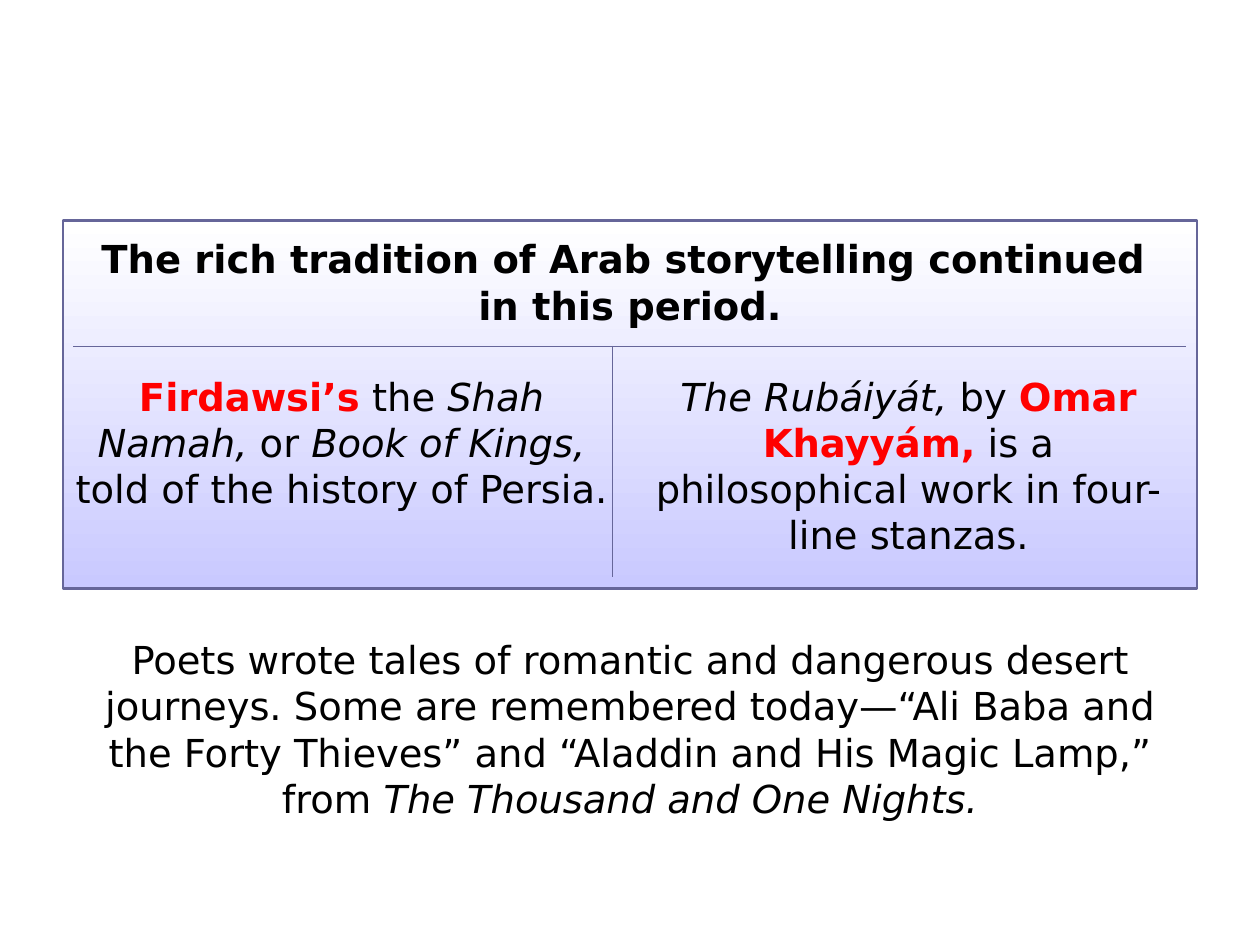
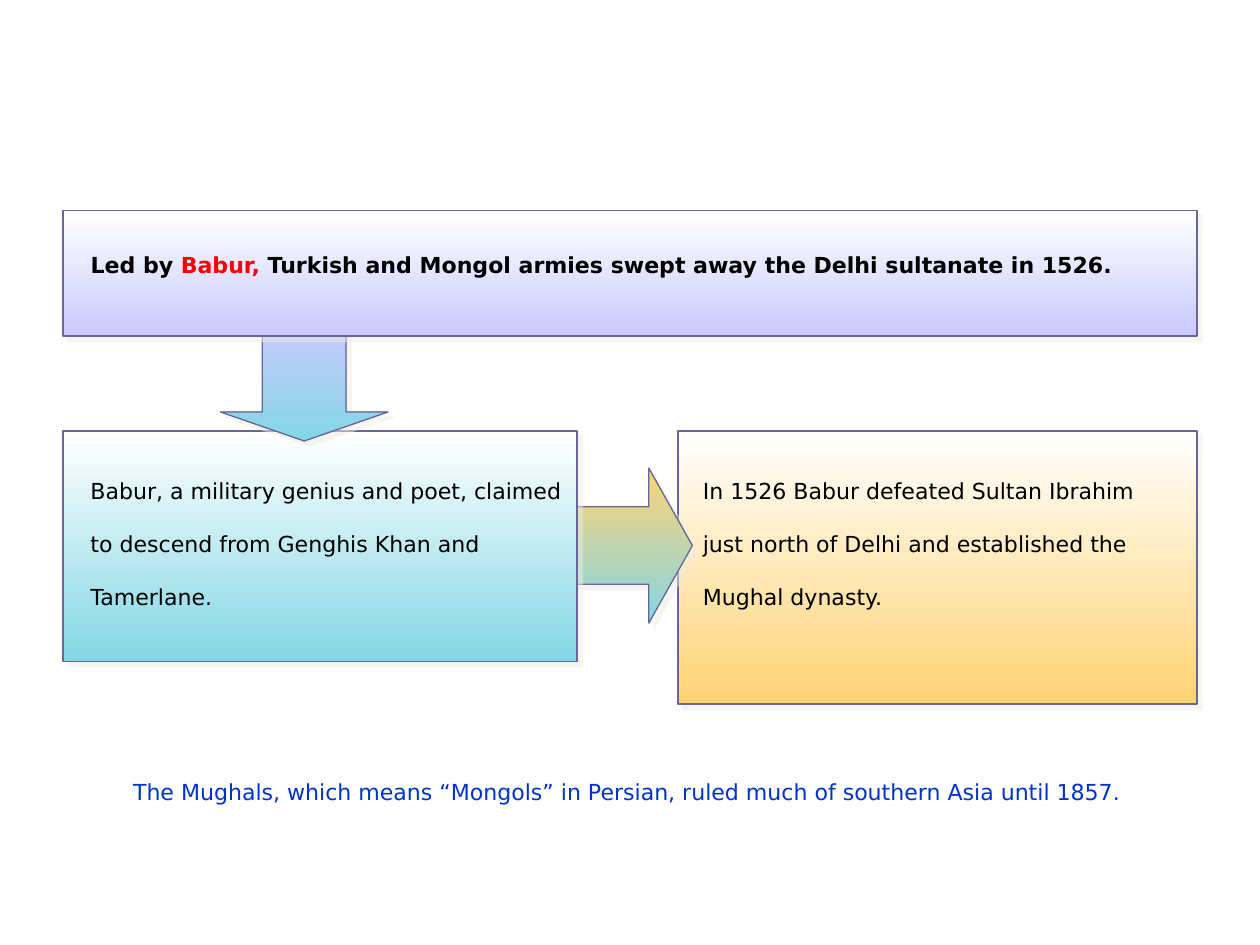
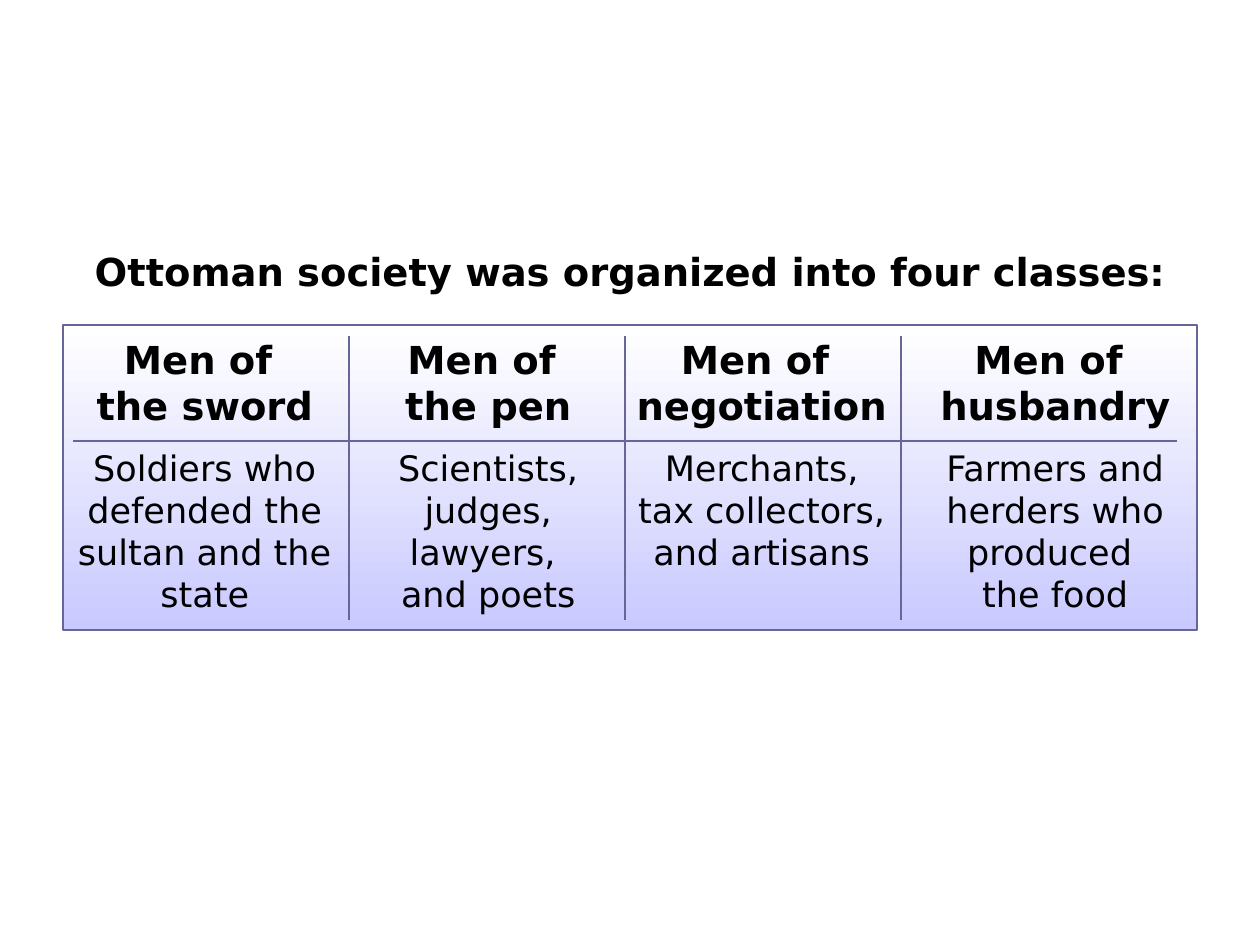
import pptx
import pptx.util
import pptx.dml.color
import pptx.enum.shapes
import pptx.enum.text
import pptx.oxml
import pptx.oxml.ns

Inches = pptx.util.Inches
Pt = pptx.util.Pt
RGB = pptx.dml.color.RGBColor
ALIGN = pptx.enum.text.PP_ALIGN
SHAPE = pptx.enum.shapes.MSO_SHAPE
NS = pptx.oxml.ns.nsdecls("a")

BLACK = RGB(0x00, 0x00, 0x00)
WHITE = RGB(0xFF, 0xFF, 0xFF)
RED = RGB(0xFF, 0x00, 0x00)
BLUE = RGB(0x00, 0x33, 0xCC)
SLATE = RGB(0x66, 0x66, 0x99)
LAVENDER = RGB(0xC9, 0xC9, 0xFF)
TEAL = RGB(0x83, 0xD7, 0xE5)
GOLD = RGB(0xFE, 0xD2, 0x73)
SHADOW = RGB(0xEE, 0xEC, 0xE1)

FONT = "DejaVu Sans"
LEFT, WIDTH = 0.5, 9
HEAD_SIZE, BODY_SIZE, FLOW_SIZE = 22, 20, 12.6
KEY = dict(bold=True, color=RED)
ITALIC = dict(italic=True)


def add_run(p, text, size=HEAD_SIZE, color=BLACK, bold=False, italic=False):
    r = p.add_run()
    r.text = text
    r.font.name = FONT
    r.font.size = Pt(size)
    r.font.color.rgb = color
    r.font.bold = bold
    r.font.italic = italic


def border_xml(side, visible):
    if not visible:
        return f'<a:ln{side} {NS} w="0"><a:noFill/></a:ln{side}>'
    return (f'<a:ln{side} {NS} w="{Pt(1)}"><a:solidFill><a:srgbClr val="{SLATE}"/>'
            f'</a:solidFill></a:ln{side}>')


class Deck:
    def __init__(self):
        self.prs = pptx.Presentation()
        self.prs.slide_width = Inches(10)
        self.prs.slide_height = Inches(7.5)
        self.slide = None

    def new_slide(self):
        self.slide = self.prs.slides.add_slide(self.prs.slide_layouts[6])

    def text(self, x, y, w, h, *paragraphs, align=ALIGN.CENTER, spacing=None, gap=0, **style):
        """Each paragraph is a string or a list of strings and (string, format) pairs."""
        tf = self.slide.shapes.add_textbox(Inches(x), Inches(y), Inches(w), Inches(h)).text_frame
        tf.word_wrap = True
        for i, runs in enumerate(paragraphs):
            p = tf.add_paragraph() if i else tf.paragraphs[0]
            p.alignment = align
            p.line_spacing = spacing
            if i:
                p.space_before = Pt(gap)
            for run in [runs] if isinstance(runs, (str, tuple)) else runs:
                words, extra = (run, {}) if isinstance(run, str) else run
                lines = words.split("\n")
                for n, line in enumerate(lines):
                    if n:
                        p.add_line_break()
                    add_run(p, line, **{**style, **extra})

    def flow_text(self, x, y, w, h, *paragraphs, align=ALIGN.LEFT, **style):
        self.text(x, y, w, h, *paragraphs, align=align, spacing=2.0, size=FLOW_SIZE, **style)

    def panel(self, x, y, w, h, end, start=WHITE, kind=SHAPE.RECTANGLE, angle=270,
              line=1, shadow=False):
        """Gradient shape; angle runs counter-clockwise from left to right."""
        sp = self.slide.shapes.add_shape(kind, Inches(x), Inches(y), Inches(w), Inches(h))
        sp.fill.gradient()
        sp.fill.gradient_angle = angle
        for stop, color in zip(sp.fill.gradient_stops, (start, end)):
            stop.color.rgb = color
        sp.line.color.rgb = SLATE
        sp.line.width = Pt(line)
        sp.shadow.inherit = False
        if shadow:
            effects = sp._element.spPr.find(pptx.oxml.ns.qn("a:effectLst"))
            effects.append(pptx.oxml.parse_xml(
                f'<a:outerShdw {NS} blurRad="0" dist="{Pt(4.2)}" dir="2700000" algn="ctr" '
                f'rotWithShape="0"><a:srgbClr val="{SHADOW}"><a:alpha val="50000"/>'
                f'</a:srgbClr></a:outerShdw>'))
        return sp

    def rules(self, x, y, columns, rows, merged_head=False):
        """Empty table whose inner borders divide a panel."""
        frame = self.slide.shapes.add_table(len(rows), len(columns), Inches(x), Inches(y),
                                            Inches(sum(columns)), Inches(sum(rows)))
        table = frame.table
        for column, w in zip(table.columns, columns):
            column.width = Inches(w)
        for row, h in zip(table.rows, rows):
            row.height = Inches(h)
        for r in range(len(rows)):
            for c in range(len(columns)):
                cell = table.cell(r, c)
                cell.fill.background()
                split = r > 0 or not merged_head
                sides = dict(L=split and c > 0, R=split and c < len(columns) - 1,
                             T=r > 0, B=r < len(rows) - 1)
                tc_pr = cell._tc.get_or_add_tcPr()
                for i, (side, visible) in enumerate(sides.items()):
                    tc_pr.insert(i, pptx.oxml.parse_xml(border_xml(side, visible)))
        if merged_head:
            table.cell(0, 0).merge(table.cell(0, len(columns) - 1))


def storytelling(deck):
    deck.new_slide()
    deck.text(LEFT, 5, WIDTH, 1.59, [
        "Poets wrote tales of romantic and dangerous desert journeys. Some are remembered "
        "today—“Ali Baba and the Forty Thieves” and “Aladdin and His Magic Lamp,” from ",
        ("The Thousand and One Nights.", ITALIC)])
    deck.panel(LEFT, 1.75, WIDTH, 2.92, LAVENDER, line=1.5)
    deck.rules(0.58, 2.27, [4.28, 4.55], [0.48, 1.83], merged_head=True)
    deck.text(LEFT, 1.82, WIDTH, 1.07,
              "The rich tradition of Arab storytelling continued \nin this period.", bold=True)
    deck.text(LEFT, 2.91, 4.42, 1.81, [
        ("Firdawsi’s", KEY), " the ", ("Shah Namah,", ITALIC), " or ",
        ("Book of Kings,", ITALIC), " told of the history of Persia."])
    deck.text(4.92, 2.91, 4.58, 1.81, [
        ("The Rubáiyát, ", ITALIC), "by ", ("Omar Khayyám,", KEY),
        " is a philosophical work in four-line stanzas."])


def mughal_rise(deck):
    deck.new_slide()
    deck.panel(5.38, 3.42, 4.12, 2.17, GOLD, shadow=True)
    deck.flow_text(5.48, 3.53, 3.92, 1.93,
                   "In 1526 Babur defeated Sultan Ibrahim just north of Delhi and "
                   "established the Mughal dynasty.")
    across = deck.panel(4.34, 3.79, 1.23, 1.08, GOLD, start=TEAL, kind=SHAPE.DOWN_ARROW,
                        angle=0, line=0.75, shadow=True)
    across.rotation = 270
    across.adjustments[0] = 0.5
    across.adjustments[1] = 0.32
    deck.panel(LEFT, 3.42, 4.08, 1.83, TEAL, shadow=True)
    deck.flow_text(0.62, 3.53, 3.97, 1.57,
                   "Babur, a military genius and poet, claimed to descend from "
                   "Genghis Khan and Tamerlane.")
    deck.panel(1.75, 2.58, 1.33, 0.92, TEAL, start=LAVENDER, kind=SHAPE.DOWN_ARROW,
               line=0.75, shadow=True).adjustments[1] = 0.25
    deck.panel(LEFT, 1.67, WIDTH, 1, LAVENDER, shadow=True)
    deck.flow_text(0.62, 1.74, 8.78, 0.83, [
        "Led by ", ("Babur,", KEY),
        " Turkish and Mongol armies swept away the Delhi sultanate in 1526."], bold=True)
    deck.flow_text(LEFT, 5.92, WIDTH, 0.83,
                   "The Mughals, which means “Mongols” in Persian, ruled much of southern "
                   "Asia until 1857. ", align=ALIGN.CENTER, color=BLUE)


def ottoman_classes(deck):
    deck.new_slide()
    deck.text(LEFT, 1.92, WIDTH, 0.47, "Ottoman society was organized into four classes:",
              bold=True)
    deck.panel(LEFT, 2.58, WIDTH, 2.42, LAVENDER, line=1.5)
    deck.rules(0.58, 2.67, [2.19] * 4, [0.83, 1.42])
    classes = [
        (0.5, "Men of \nthe sword", "Soldiers who defended the sultan and the state"),
        (2.75, "Men of \nthe pen", "Scientists, judges, lawyers, \nand poets"),
        (4.92, "Men of \nnegotiation", "Merchants, tax collectors, and artisans"),
        (7.25, "Men of \nhusbandry", "Farmers and herders who produced \nthe food"),
    ]
    for x, name, members in classes:
        deck.text(x, 2.62, 2.25, 2.33, (name, dict(bold=True)),
                  (members, dict(size=BODY_SIZE)), gap=10)


def main():
    deck = Deck()
    storytelling(deck)
    mughal_rise(deck)
    ottoman_classes(deck)
    deck.prs.save("out.pptx")


if __name__ == "__main__":
    main()
